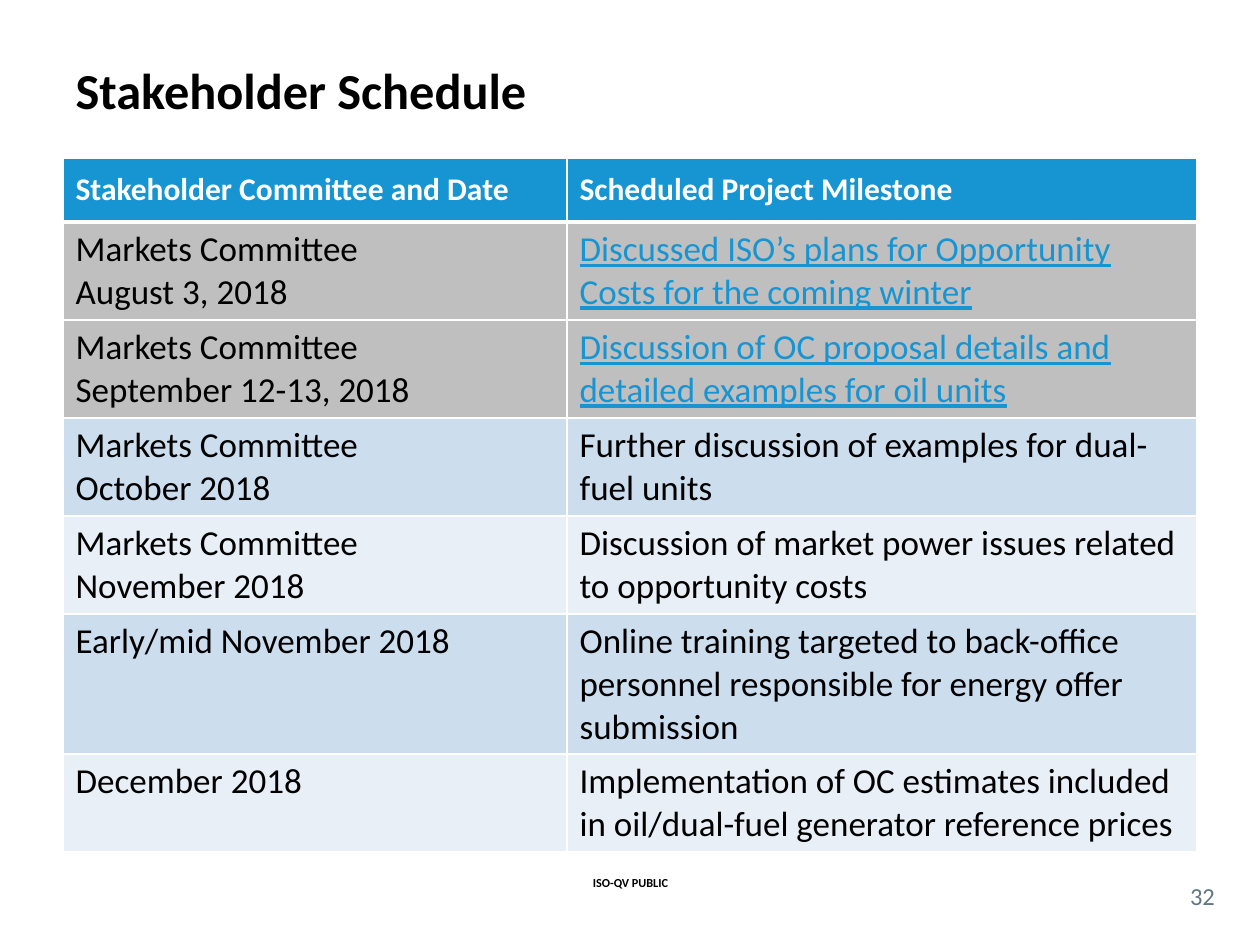
import pptx
import pptx.dml.color
import pptx.enum.text
import pptx.oxml
import pptx.oxml.ns
import pptx.util
from dataclasses import dataclass

EMU_PER_PX = 914400 / 126
ALIGN = pptx.enum.text.PP_ALIGN
MIDDLE = pptx.enum.text.MSO_ANCHOR.MIDDLE
TOP = pptx.enum.text.MSO_ANCHOR.TOP


@dataclass(frozen=True)
class Theme:
    font: str = "Calibri"
    black: str = "000000"
    white: str = "FFFFFF"
    accent: str = "1795D2"
    number: str = "62777F"
    done: str = "BFBFBF"
    bands: tuple = ("CCDDEE", "E8EFF7")
    title_size: float = 28.8
    header_size: int = 18
    cell_size: int = 20
    number_size: int = 14
    footer_size: int = 7


THEME = Theme()
HEADERS = ["Stakeholder Committee and Date", "Scheduled Project Milestone"]
COLUMN_WIDTHS = [504, 630]
HEADER_HEIGHT = 64
MILESTONES = [
    (["Markets Committee", "August 3, 2018"],
     "Discussed ISO’s plans for Opportunity Costs for the coming winter", 98, True),
    (["Markets Committee", "September 12-13, 2018"],
     "Discussion of OC proposal details and detailed examples for oil units", 98, True),
    (["Markets Committee", "October 2018"],
     "Further discussion of examples for dual-fuel units", 98, False),
    (["Markets Committee", "November 2018"],
     "Discussion of market power issues related to opportunity costs", 98, False),
    (["Early/mid November 2018"],
     "Online training targeted to back-office personnel responsible for energy offer submission",
     140, False),
    (["December 2018"],
     "Implementation of OC estimates included in oil/dual-fuel generator reference prices",
     98, False),
]


def px(value):
    return round(value * EMU_PER_PX)


def place(shape, box):
    for name, value in zip(("left", "top", "width", "height"), box):
        setattr(shape, name, px(value))


def write_text(text_frame, lines, size, color, align=ALIGN.LEFT, **styles):
    for index, line in enumerate(lines):
        paragraph = text_frame.paragraphs[0] if index == 0 else text_frame.add_paragraph()
        paragraph.alignment = align
        run = paragraph.add_run()
        run.text = line
        font_values = {"name": THEME.font, "size": pptx.util.Pt(size), "bold": False, **styles}
        for name, value in font_values.items():
            setattr(run.font, name, value)
        run.font.color.rgb = pptx.dml.color.RGBColor.from_string(color)


def add_title(slide, text):
    title = slide.shapes.title
    place(title, (63, 53, 1134, 73))
    title.text_frame.vertical_anchor = MIDDLE
    write_text(title.text_frame, [text], THEME.title_size, THEME.black, bold=True)


def add_label(slide, text, box, size, color, **styles):
    label = slide.shapes.add_textbox(*map(px, box))
    frame_values = {"word_wrap": True, "vertical_anchor": MIDDLE, "margin_left": 0,
                    "margin_right": 0, "margin_top": 0, "margin_bottom": 0}
    for name, value in frame_values.items():
        setattr(label.text_frame, name, value)
    write_text(label.text_frame, [text], size, color, ALIGN.CENTER, **styles)


def set_borders(cell, widths):
    properties = cell._tc.get_or_add_tcPr()
    for side, points in widths.items():
        properties.append(pptx.oxml.parse_xml(
            f'<a:{side} {pptx.oxml.ns.nsdecls("a")} w="{pptx.util.Pt(points)}">'
            f'<a:solidFill><a:srgbClr val="{THEME.white}"/></a:solidFill></a:{side}>'))


def fill_cell(cell, lines, fill, size, color, anchor=MIDDLE, top=1, bottom=1, **styles):
    set_borders(cell, {"lnL": 1, "lnR": 1, "lnT": top, "lnB": bottom})
    cell.fill.solid()
    cell.fill.fore_color.rgb = pptx.dml.color.RGBColor.from_string(fill)
    cell.vertical_anchor = anchor
    write_text(cell.text_frame, lines, size, color, **styles)


def add_schedule(slide):
    heights = [HEADER_HEIGHT] + [milestone[2] for milestone in MILESTONES]
    box = (63, 158, sum(COLUMN_WIDTHS), sum(heights))
    table = slide.shapes.add_table(len(heights), len(COLUMN_WIDTHS), *map(px, box)).table
    for column, width in zip(table.columns, COLUMN_WIDTHS):
        column.width = px(width)
    for row, height in zip(table.rows, heights):
        row.height = px(height)
    for index, header in enumerate(HEADERS):
        fill_cell(table.cell(0, index), [header], THEME.accent, THEME.header_size,
                  THEME.white, bottom=3, bold=True)
    for index, (meeting, milestone, _, done) in enumerate(MILESTONES):
        row = index + 1
        fill = THEME.done if done else THEME.bands[index % 2]
        top = 3 if index == 0 else 1
        fill_cell(table.cell(row, 0), meeting, fill, THEME.cell_size, THEME.black, TOP, top)
        fill_cell(table.cell(row, 1), [milestone], fill, THEME.cell_size,
                  THEME.accent if done else THEME.black, top=top, underline=done)


def main():
    presentation = pptx.Presentation()
    presentation.slide_width = px(1260)
    presentation.slide_height = px(945)
    slide = presentation.slides.add_slide(presentation.slide_layouts[5])
    add_label(slide, "ISO-QV PUBLIC", (538, 872, 185, 21), THEME.footer_size,
              THEME.black, bold=True)
    add_title(slide, "Stakeholder Schedule")
    add_label(slide, "32", (1176, 877, 53, 37), THEME.number_size, THEME.number)
    add_schedule(slide)
    presentation.save("out.pptx")


if __name__ == "__main__":
    main()
